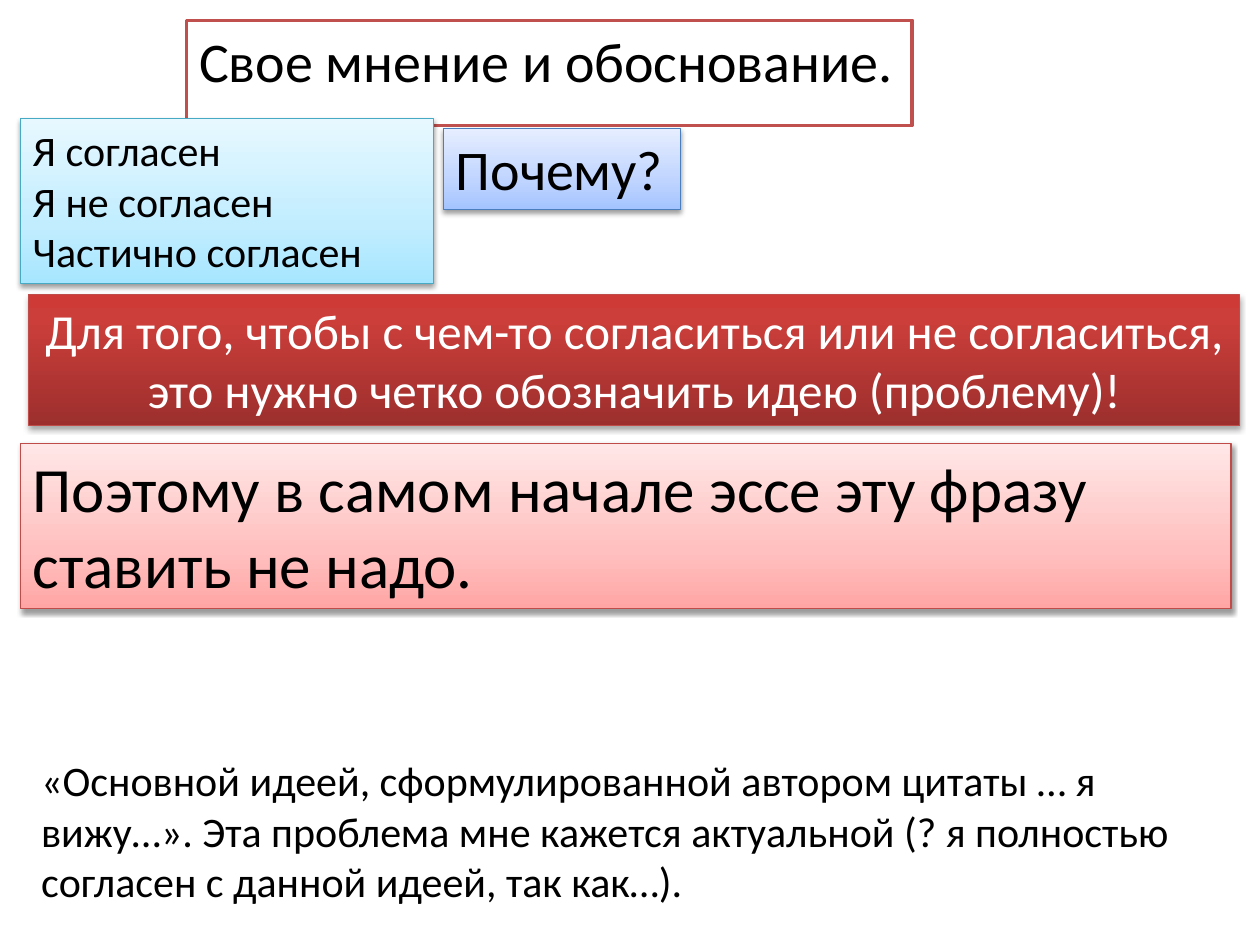
from lxml.etree import SubElement
from pptx import Presentation
from pptx.dml.color import RGBColor
from pptx.enum.shapes import MSO_SHAPE
from pptx.enum.text import MSO_ANCHOR, MSO_AUTO_SIZE as AutoSize, PP_ALIGN
from pptx.oxml.ns import qn
from pptx.util import Cm, Pt

FONT = "Calibri"
COLORS = {"text": "000000", "light_text": "FFFFFF", "paper": "FFFFFF",
          "heading_line": "C0504D", "shadow": "000000"}

# Gradient stops run from the bottom edge to the top edge
THEMES = {
    "aqua": {"line": "46AAC5", "stops": {0: "A7E6FF", 35: "C1EDFF", 100: "E7F8FF"}},
    "blue": {"line": "4B7EBC", "stops": {0: "A4C4FF", 35: "BFD4FF", 100: "E6EEFF"}},
    "rose": {"line": "BF4C48", "stops": {0: "FFA6A5", 35: "FFC0BF", 100: "FFE7E7"}},
    "red": {"line": "BF4C48", "stops": {0: "9C2F2D", 80: "CB3E3A", 100: "CE3B37"},
            "text": "light_text", "shadow": (35, 1.8)},
}


def rgb(value):
    return RGBColor.from_string(value)


def place(part, box):
    for side, value in zip(("left", "top", "width", "height"), box):
        setattr(part, side, Cm(value))


def write(part, lines, size, color="text", align=PP_ALIGN.LEFT, wrap=True):
    frame = part.text_frame
    frame.text = "\n".join(lines)
    frame_format = {"word_wrap": wrap, "vertical_anchor": MSO_ANCHOR.TOP,
                    "auto_size": AutoSize.SHAPE_TO_FIT_TEXT}
    for name, value in frame_format.items():
        setattr(frame, name, value)
    for paragraph in frame.paragraphs:
        paragraph.alignment = align
        for run in paragraph.runs:
            for name, value in {"name": FONT, "size": Pt(size)}.items():
                setattr(run.font, name, value)
            run.font.color.rgb = rgb(COLORS[color])


def outline(part, color, width):
    part.line.color.rgb = rgb(color)
    part.line.width = Pt(width)


def shade(part, stops):
    part.fill.gradient()
    part.fill.gradient_angle = 90
    stop_list = part._element.spPr.find(qn("a:gradFill")).find(qn("a:gsLst"))
    for stop in list(stop_list):
        stop_list.remove(stop)
    for position, color in stops.items():
        stop = SubElement(stop_list, qn("a:gs"), pos=str(position * 1000))
        SubElement(stop, qn("a:srgbClr"), val=color)


def cast_shadow(part, opacity, distance):
    part.shadow.inherit = False
    effects = part._element.spPr.find(qn("a:effectLst"))
    shadow = SubElement(effects, qn("a:outerShdw"), blurRad=str(Pt(3.1)),
                        dist=str(Pt(distance)), dir="5400000", rotWithShape="0")
    color = SubElement(shadow, qn("a:srgbClr"), val=COLORS["shadow"])
    SubElement(color, qn("a:alpha"), val=str(opacity * 1000))


def add_heading(slide, box, text):
    heading = slide.shapes.title
    place(heading, box)
    heading.fill.solid()
    heading.fill.fore_color.rgb = rgb(COLORS["paper"])
    outline(heading, COLORS["heading_line"], 2)
    write(heading, [text], 32, wrap=False)
    # Hanging indent of the heading
    indent = Cm(0.95)
    properties = heading.text_frame.paragraphs[0]._p.get_or_add_pPr()
    for name, value in {"marL": indent, "indent": -indent}.items():
        properties.set(name, str(value))


def add_card(slide, box, lines, size, theme, align=PP_ALIGN.LEFT):
    card = slide.shapes.add_shape(MSO_SHAPE.RECTANGLE, *map(Cm, box))
    look = THEMES[theme]
    shade(card, look["stops"])
    outline(card, look["line"], 0.75)
    cast_shadow(card, *look.get("shadow", (38, 1.6)))
    write(card, lines, size, look.get("text", "text"), align)


def add_sample_phrase(slide, box, text):
    phrase = slide.shapes.add_textbox(*map(Cm, box))
    write(phrase, [text], 24)


def main():
    prs = Presentation()
    prs.slide_width, prs.slide_height = Cm(25.4), Cm(19.05)
    slide = prs.slides.add_slide(prs.slide_layouts[5])

    # Heading
    add_heading(slide, (3.76, 0.41, 14.63, 1.63), "Свое мнение и обоснование.")

    # Possible stances and the question they raise
    add_card(slide, (0.41, 2.39, 8.33, 3.33),
             ["Я согласен", "Я не согласен", "Частично согласен"], 24, "aqua")
    add_card(slide, (8.94, 2.59, 4.78, 1.63), ["Почему?"], 32, "blue")

    # Rule and conclusion
    add_card(slide, (0.58, 5.94, 24.41, 2.64),
             ["Для того, чтобы с чем-то согласиться или не согласиться, "
              "это нужно четко обозначить идею (проблему)!"],
             28, "red", PP_ALIGN.CENTER)
    add_card(slide, (0.41, 8.94, 24.41, 3.33),
             ["Поэтому в самом начале эссе эту фразу ставить не надо."], 36, "rose")

    # Sample phrase for the essay
    add_sample_phrase(slide, (0.58, 15.09, 23.83, 3.33),
                      "«Основной идеей, сформулированной автором цитаты … я вижу…». "
                      "Эта проблема мне кажется актуальной (? я полностью согласен "
                      "с данной идеей, так как…).")

    prs.save("out.pptx")


if __name__ == "__main__":
    main()
